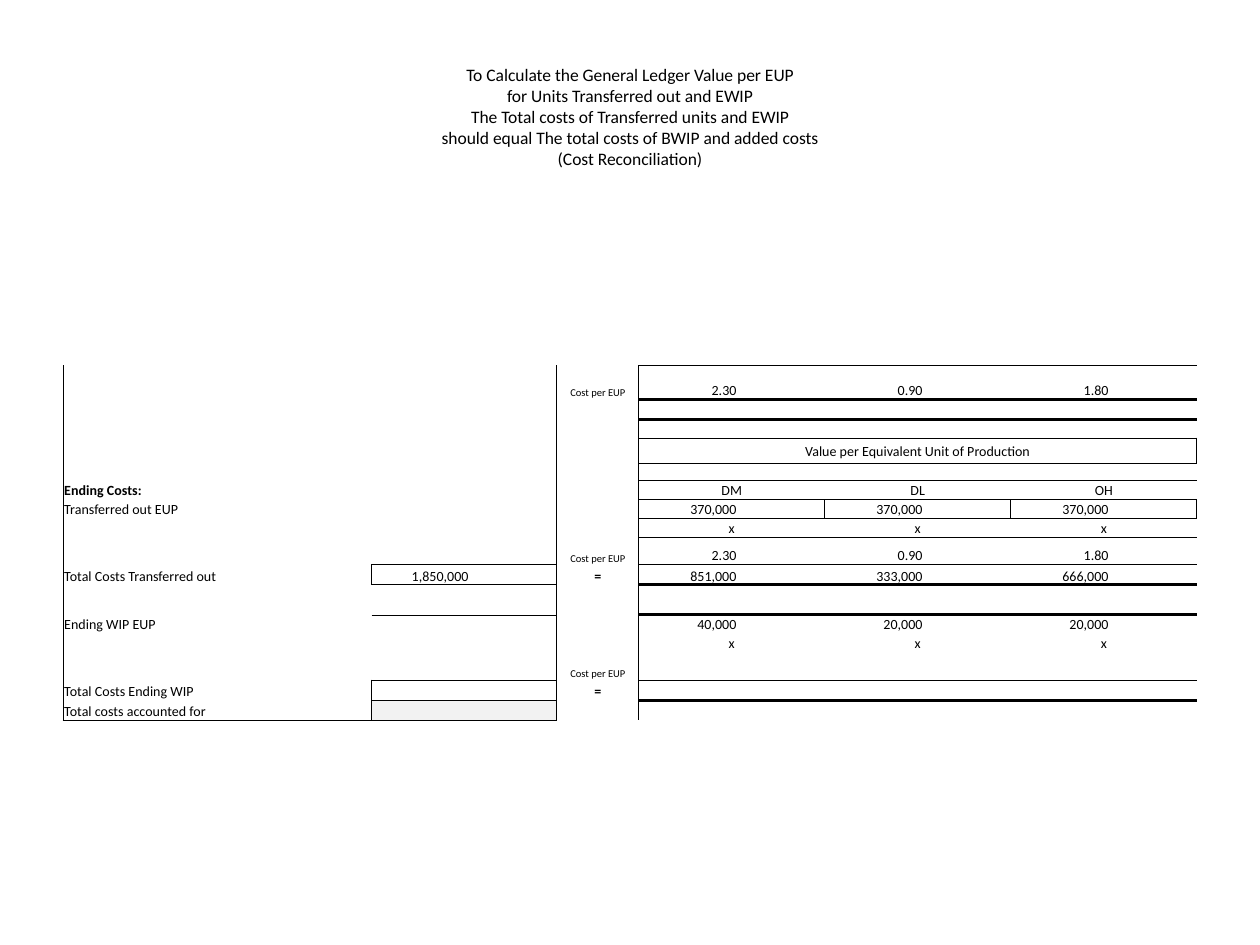
import collections
import dataclasses

import lxml.etree
import pptx
import pptx.dml.color
import pptx.enum.text
import pptx.oxml.ns
import pptx.util

Inches = pptx.util.Inches
Pt = pptx.util.Pt
ALIGN = pptx.enum.text.PP_ALIGN
ANCHOR = pptx.enum.text.MSO_ANCHOR
qn = pptx.oxml.ns.qn


@dataclasses.dataclass(frozen=True)
class Theme:
    font: str = "Calibri"
    ink: str = "000000"
    total_fill: str = "F2F2F2"
    title: float = 10
    body: float = 8
    note: float = 6
    thin: float = 0.5
    thick: float = 2


THEME = Theme()
NO_GRID_STYLE = "{2D5ABB26-0587-4C30-8999-92F81FD0307C}"
TITLE = "\v".join([
    "To Calculate the General Ledger Value per EUP",
    "for Units Transferred out and EWIP",
    "The Total costs of Transferred units and EWIP",
    "should equal The total costs of BWIP and added costs",
    "(Cost Reconciliation)",
])

ROW_HEIGHTS = [0.27, 0.16, 0.15, 0.2, 0.14, 0.15, 0.15, 0.15,
               0.22, 0.16, 0.24, 0.15, 0.15, 0.22, 0.16, 0.16]
LABEL_WIDTHS = [1.57, 0.88, 1.47, 0.65]
AMOUNT, NOTE = 2, 3
COST_COLUMNS = range(4, 7)
VALUE_HEADING, UNITS, LAST = 3, 6, 15
TOTAL_ROWS = (0, 9, 14)
MERGES = [(VALUE_HEADING, 4, 6), (9, 0, 1), (14, 0, 1), (LAST, 0, 1)]

LABELS = {5: "Ending Costs:", 6: "Transferred out EUP",
          9: "Total Costs Transferred out", 11: "Ending WIP EUP",
          14: "Total Costs Ending WIP", 15: "Total costs accounted for"}
NOTES = {0: "Cost per EUP", 8: "Cost per EUP", 9: "=",
         13: "Cost per EUP", 14: "="}
COST_PER_EUP = ["2.30", "0.90", "1.80"]
CENTERED_COSTS = {5: ["DM", "DL", "OH"], 7: ["x"] * 3, 12: ["x"] * 3}
COSTS = {0: COST_PER_EUP, 6: ["370,000"] * 3, 8: COST_PER_EUP,
         9: ["851,000", "333,000", "666,000"],
         11: ["40,000", "20,000", "20,000"]}


def style_text(paragraph, size, align=ALIGN.LEFT, bold=False):
    paragraph.alignment = align
    for run in paragraph.runs:
        run.font.name = THEME.font
        run.font.size = Pt(size)
        run.font.bold = bold
        run.font.color.rgb = pptx.dml.color.RGBColor.from_string(THEME.ink)


def add_title(slide, left, top, width, height):
    frame = slide.shapes.add_textbox(left, top, width, height).text_frame
    frame.word_wrap = True
    frame.vertical_anchor = ANCHOR.MIDDLE
    frame.text = TITLE
    style_text(frame.paragraphs[0], THEME.title, ALIGN.CENTER)


def reconciliation_edges():
    """Return the border widths of each cell, keyed by (row, column)."""
    edges = collections.defaultdict(dict)
    neighbours = {"L": (0, -1, "R"), "R": (0, 1, "L"),
                  "T": (-1, 0, "B"), "B": (1, 0, "T")}

    def draw(row, column, sides, width=THEME.thin):
        for side in sides:
            down, across, opposite = neighbours[side]
            edges[row, column][side] = width
            edges[row + down, column + across][opposite] = width

    for row in range(LAST + 1):
        draw(row, 0, "L")
        draw(row, AMOUNT, "R")
    for column in range(AMOUNT + 1):
        draw(LAST, column, "B")
    for row in (9, 14, LAST):
        draw(row, AMOUNT, "LTB")
    for column in COST_COLUMNS:
        draw(VALUE_HEADING, column, "TB")
        draw(UNITS, column, "LRTB")
        for row in TOTAL_ROWS:
            draw(row, column, "T")
            draw(row, column, "B", THEME.thick)
    draw(VALUE_HEADING, COST_COLUMNS[0], "L")
    draw(VALUE_HEADING, COST_COLUMNS[-1], "R")
    for row, first, last in MERGES:
        edges[row, first]["R"] = edges[row, last]["R"]
    return edges


def draw_borders(cell, widths):
    properties = cell._tc.get_or_add_tcPr()
    for side in "LRTB":
        if side in widths:
            line = lxml.etree.SubElement(properties, qn(f"a:ln{side}"),
                                         w=str(Pt(widths[side])))
            fill = lxml.etree.SubElement(line, qn("a:solidFill"))
            lxml.etree.SubElement(fill, qn("a:srgbClr"), val=THEME.ink)


def write_cell(cell, text, **style):
    cell.text = text
    style_text(cell.text_frame.paragraphs[0], **{"size": THEME.body, **style})


def write_contents(table):
    for row, label in LABELS.items():
        write_cell(table.cell(row, 0), label, bold=label.endswith(":"))
    for row, note in NOTES.items():
        sign = note == "="
        write_cell(table.cell(row, NOTE), note, align=ALIGN.CENTER, bold=sign,
                   size=THEME.body if sign else THEME.note)
    heading = table.cell(VALUE_HEADING, COST_COLUMNS[0])
    write_cell(heading, "Value per Equivalent Unit of Production",
               align=ALIGN.CENTER)
    heading.vertical_anchor = ANCHOR.MIDDLE
    for row, costs in CENTERED_COSTS.items():
        for column, cost in zip(COST_COLUMNS, costs):
            write_cell(table.cell(row, column), cost, align=ALIGN.CENTER)

    amounts = [(row, column, cost) for row, costs in COSTS.items()
               for column, cost in zip(COST_COLUMNS, costs)]
    for row, column, amount in amounts + [(9, AMOUNT, "1,850,000")]:
        cell = table.cell(row, column)
        write_cell(cell, amount, align=ALIGN.RIGHT)
        cell.margin_right = Inches(0.7)


def add_reconciliation(slide, left, top, width, height):
    table = slide.shapes.add_table(
        len(ROW_HEIGHTS), len(LABEL_WIDTHS) + len(COST_COLUMNS),
        left, top, width, height).table
    table.first_row = table.horz_banding = False
    table._tbl.tblPr.find(qn("a:tableStyleId")).text = NO_GRID_STYLE

    cost_width = (width - Inches(sum(LABEL_WIDTHS))) // len(COST_COLUMNS)
    widths = [Inches(w) for w in LABEL_WIDTHS] + [cost_width] * len(COST_COLUMNS)
    for column, column_width in zip(table.columns, widths):
        column.width = column_width
    for row, share in zip(table.rows, ROW_HEIGHTS):
        row.height = int(height * share / sum(ROW_HEIGHTS))
    for row, first, last in MERGES:
        table.cell(row, first).merge(table.cell(row, last))

    edges = reconciliation_edges()
    for row in range(len(ROW_HEIGHTS)):
        for column in range(len(widths)):
            cell = table.cell(row, column)
            cell.margin_left = cell.margin_right = cell.margin_top = Inches(0.01)
            cell.margin_bottom = 0
            cell.vertical_anchor = ANCHOR.BOTTOM
            draw_borders(cell, edges[row, column])
            cell.fill.background()
            # Keeps an empty cell from stretching its row.
            lxml.etree.SubElement(cell.text_frame.paragraphs[0]._p,
                                  qn("a:endParaRPr"), sz=str(THEME.note * 100))
    total = table.cell(LAST, AMOUNT).fill
    total.solid()
    total.fore_color.rgb = pptx.dml.color.RGBColor.from_string(THEME.total_fill)
    write_contents(table)


def main():
    deck = pptx.Presentation()
    deck.slide_width, deck.slide_height = Inches(10), Inches(7.5)
    slide = deck.slides.add_slide(deck.slide_layouts[6])
    add_title(slide, Inches(0.5), Inches(0.3), Inches(9), Inches(1.25))
    add_reconciliation(slide, Inches(0.5), Inches(2.9), Inches(9), Inches(2.82))
    deck.save("out.pptx")


if __name__ == "__main__":
    main()
